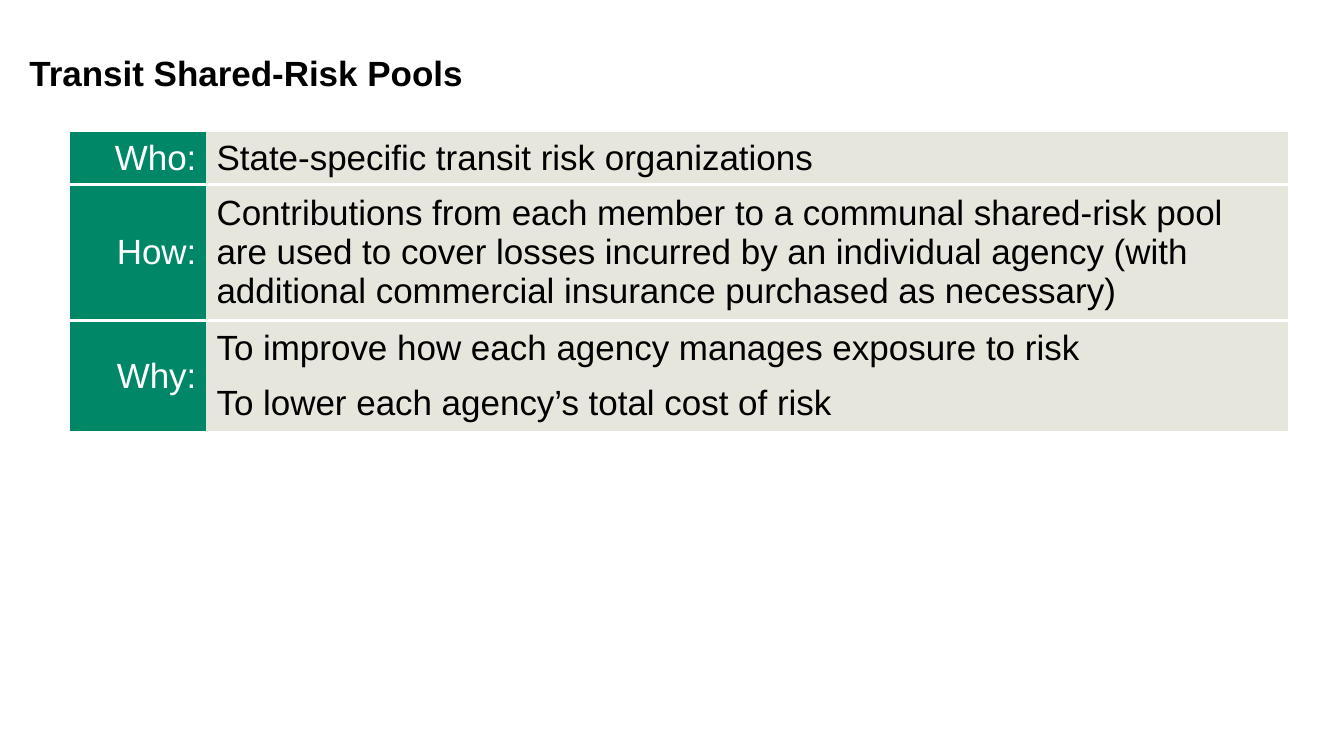
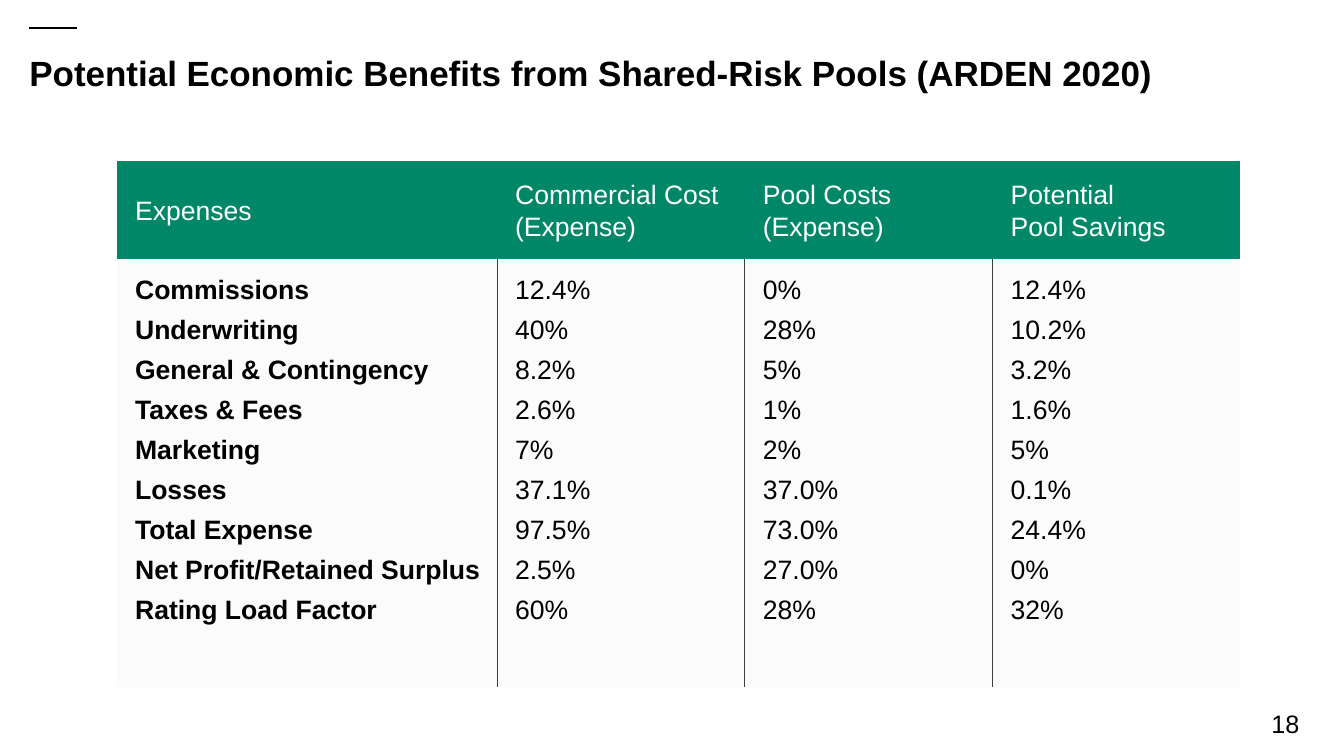
from dataclasses import dataclass

from lxml import etree
from pptx import Presentation
from pptx import util as u
from pptx.dml.color import RGBColor
from pptx.enum import shapes, text
from pptx.oxml import ns

Pt = u.Pt
LEFT, RIGHT, JUSTIFY = text.PP_ALIGN.LEFT, text.PP_ALIGN.RIGHT, text.PP_ALIGN.JUSTIFY
TOP, MIDDLE = text.MSO_ANCHOR.TOP, text.MSO_ANCHOR.MIDDLE
NO_STYLE = "{2D5ABB26-0587-4C30-8999-92F81FD0307C}"


@dataclass(frozen=True)
class Theme:
    font: str = "Arial"
    ink: str = "000000"
    paper: str = "FFFFFF"
    green: str = "008768"
    sand: str = "E7E6DD"
    mist: str = "F2F2F2"
    rule: str = "404040"
    title_size: float = 25
    summary_size: float = 25
    figures_size: float = 19
    number_size: float = 18


@dataclass(frozen=True)
class CellStyle:
    """Look of the text and ground of one table cell."""
    fill: str
    color: str
    size: float
    align: int = LEFT
    anchor: int = MIDDLE
    bold: bool = False
    alpha: int = 100
    gap: float = 6
    line_spacing: float = 1.0
    margins: tuple = (7.2, 3.6, 7.2, 3.6)


class Deck:
    def __init__(self, theme):
        self.theme = theme
        self.prs = Presentation()
        self.prs.slide_width, self.prs.slide_height = Pt(960), Pt(540)
        self.slide = None

    def new_slide(self, title):
        self.slide = self.prs.slides.add_slide(self.prs.slide_layouts[6])
        self.label(title, (21, 34.5, 918, 51), self.theme.title_size,
                   bold=True, margins=(0, 2.5, 0, 0))

    def label(self, words, box, size, bold=False, margins=(7.2, 3.6, 7.2, 3.6)):
        frame = self.slide.shapes.add_textbox(*map(Pt, box)).text_frame
        frame.word_wrap = True
        self.set_margins(frame, margins)
        self.set_text(frame.paragraphs[0], words, size, self.theme.ink, bold)

    def page_marks(self, number):
        """Accent dash above the title, and the page number."""
        dash = self.slide.shapes.add_connector(
            shapes.MSO_CONNECTOR.STRAIGHT, Pt(21), Pt(20), Pt(55), Pt(20))
        dash.line.color.rgb = RGBColor.from_string(self.theme.ink)
        dash.line.width = Pt(2)
        etree.SubElement(dash._element.spPr, ns.qn("a:effectLst"))
        self.label(str(number), (901, 502.5, 43, 29), self.theme.number_size)

    def table(self, left, top, widths, heights):
        table = self.slide.shapes.add_table(
            len(heights), len(widths), Pt(left), Pt(top),
            Pt(sum(widths)), Pt(sum(heights))).table
        table.first_row = table.horz_banding = False
        table._tbl.tblPr.find(ns.qn("a:tableStyleId")).text = NO_STYLE
        for column, width in zip(table.columns, widths):
            column.width = Pt(width)
        for row, height in zip(table.rows, heights):
            row.height = Pt(height)
        return table

    def cell(self, cell, lines, style, edges="", edge_color="", edge_width=0):
        """Fill a cell; edges lists the ruled sides, in the order L, R, T, B."""
        for side in edges:
            self.edge(cell, side, edge_color, edge_width)
        cell.fill.solid()
        cell.fill.fore_color.rgb = RGBColor.from_string(style.fill)
        if style.alpha < 100:
            tint = cell._tc.tcPr.find(ns.qn("a:solidFill"))[0]
            etree.SubElement(tint, ns.qn("a:alpha"), val=str(style.alpha * 1000))
        cell.vertical_anchor = style.anchor
        self.set_margins(cell, style.margins)
        frame = cell.text_frame
        for i, line in enumerate(lines):
            para = frame.add_paragraph() if i else frame.paragraphs[0]
            self.set_text(para, line, style.size, style.color, style.bold)
            para.alignment = style.align
            para.space_before = para.space_after = Pt(style.gap)
            para.line_spacing = style.line_spacing

    def edge(self, cell, side, color, width):
        line = etree.SubElement(cell._tc.get_or_add_tcPr(), ns.qn(f"a:ln{side}"),
                                w=str(Pt(width)))
        fill = etree.SubElement(line, ns.qn("a:solidFill"))
        etree.SubElement(fill, ns.qn("a:srgbClr"), val=color)

    def set_text(self, para, words, size, color, bold):
        para.text = words
        para.font.name, para.font.size, para.font.bold = self.theme.font, Pt(size), bold
        para.font.color.rgb = RGBColor.from_string(color)

    def set_margins(self, holder, margins):
        (holder.margin_left, holder.margin_top,
         holder.margin_right, holder.margin_bottom) = map(Pt, margins)


def risk_pools(deck):
    theme = deck.theme
    deck.new_slide("Transit Shared-Risk Pools")
    summary = [
        ("Who:", ["State-specific transit risk organizations"]),
        ("How:", ["Contributions from each member to a communal shared-risk pool are "
                  "used to cover losses incurred by an individual agency (with "
                  "additional commercial insurance purchased as necessary)"]),
        ("Why:", ["To improve how each agency manages exposure to risk",
                  "To lower each agency’s total cost of risk"]),
    ]
    question = CellStyle(theme.green, theme.paper, theme.summary_size, RIGHT)
    answer = CellStyle(theme.sand, theme.ink, theme.summary_size)
    table = deck.table(50, 94.5, [97.5, 772.5], [35, 91, 75])

    # White rules between the rows only
    for row, (asked, answers) in enumerate(summary):
        edges = ("T" if row else "") + ("B" if row < len(summary) - 1 else "")
        for col, (lines, style) in enumerate([([asked], question), (answers, answer)]):
            deck.cell(table.cell(row, col), lines, style, edges, theme.paper, 3)


def economic_benefits(deck):
    theme = deck.theme
    deck.new_slide("Potential Economic Benefits from Shared-Risk Pools (ARDEN 2020)")
    deck.page_marks(18)
    headings = ["Expenses", "Commercial Cost (Expense)",
                "Pool Costs\n(Expense)", "Potential\nPool Savings"]
    expenses = [
        ("Commissions", "12.4%", "0%", "12.4%"),
        ("Underwriting", "40%", "28%", "10.2%"),
        ("General & Contingency", "8.2%", "5%", "3.2%"),
        ("Taxes & Fees", "2.6%", "1%", "1.6%"),
        ("Marketing", "7%", "2%", "5%"),
        ("Losses", "37.1%", "37.0%", "0.1%"),
        ("Total Expense", "97.5%", "73.0%", "24.4%"),
        ("Net Profit/Retained Surplus", "2.5%", "27.0%", "0%"),
        ("Rating Load Factor", "60%", "28%", "32%"),
    ]
    spacing = dict(size=theme.figures_size, gap=3, line_spacing=1.07,
                   margins=(13, 10, 0, 10))
    heading = CellStyle(theme.green, theme.paper, **spacing)
    body = dict(fill=theme.mist, color=theme.ink, alpha=30, align=JUSTIFY,
                anchor=TOP, **spacing)
    table = deck.table(83.5, 115, [271.5, 177, 177, 177], [70, 306])

    # One tall body cell per column, ruled between columns
    for col, (name, entries) in enumerate(zip(headings, zip(*expenses))):
        deck.cell(table.cell(0, col), [name], heading)
        edges = ("L" if col else "") + ("R" if col < len(headings) - 1 else "")
        deck.cell(table.cell(1, col), entries, CellStyle(bold=col == 0, **body),
                  edges, theme.rule, 0.5)


def main():
    deck = Deck(Theme())
    risk_pools(deck)
    economic_benefits(deck)
    deck.prs.save("out.pptx")


if __name__ == "__main__":
    main()
